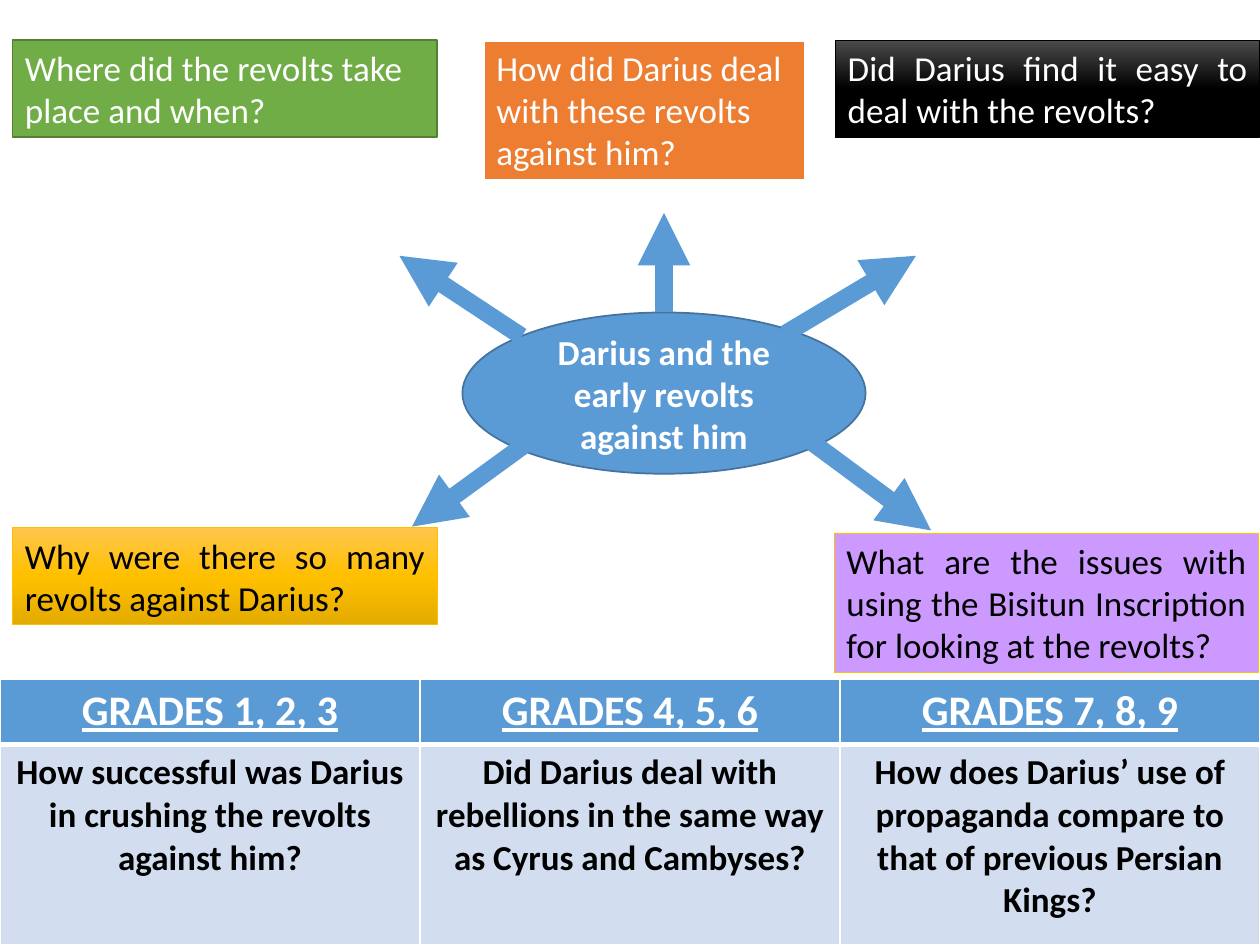
from copy import deepcopy
from dataclasses import dataclass

from lxml.etree import SubElement
from pptx import Presentation
from pptx.dml.color import RGBColor
from pptx.enum.shapes import MSO_CONNECTOR, MSO_SHAPE
from pptx.enum.text import MSO_ANCHOR, PP_ALIGN
from pptx.oxml import parse_xml
from pptx.oxml.ns import nsdecls, qn
from pptx.slide import Slide
from pptx.util import Inches, Pt

WHITE = RGBColor(0xFF, 0xFF, 0xFF)
BLACK = RGBColor(0x00, 0x00, 0x00)
BLUE = RGBColor(0x5B, 0x9B, 0xD5)
DARK_BLUE = RGBColor(0x43, 0x73, 0x9E)
PALE_BLUE = RGBColor(0xD2, 0xDE, 0xEF)
GREEN = RGBColor(0x70, 0xAD, 0x47)
DARK_GREEN = RGBColor(0x53, 0x80, 0x35)
ORANGE = RGBColor(0xED, 0x7D, 0x31)
PURPLE = RGBColor(0xCC, 0x99, 0xFF)
GOLD = RGBColor(0xFF, 0xC0, 0x00)
BLACK_FADE = (RGBColor(0x4B, 0x4B, 0x4B), BLACK, BLACK)
GOLD_FADE = (RGBColor(0xFF, 0xC6, 0x4B), GOLD, RGBColor(0xE3, 0xAB, 0x00))

LEFT, MIDDLE, RIGHT = 1, 38.4, 66.3
TOP, BOTTOM = 3.2, 41.9
WIDE, TWO_LINES, THREE_LINES = 33.7, 7.7, 11.1

QUESTIONS = [
    ("Where did the revolts take place and when?",
     (LEFT, TOP, WIDE, TWO_LINES), GREEN, DARK_GREEN, 1, WHITE, PP_ALIGN.LEFT),
    ("How did Darius deal with these revolts against him?",
     (MIDDLE, TOP, 25.5, THREE_LINES), ORANGE, WHITE, 1.5, WHITE, PP_ALIGN.LEFT),
    ("Did Darius find it easy to deal with the revolts?",
     (RIGHT, TOP, WIDE, TWO_LINES), BLACK_FADE, BLACK, 0.5, WHITE, PP_ALIGN.JUSTIFY),
    ("Why were there so many revolts against Darius?",
     (LEFT, BOTTOM, WIDE, TWO_LINES), GOLD_FADE, GOLD, 0.5, BLACK, PP_ALIGN.JUSTIFY),
    ("What are the issues with using the Bisitun Inscription for looking at the revolts?",
     (66.2, 42.3, WIDE, THREE_LINES), PURPLE, GOLD, 0.5, BLACK, PP_ALIGN.JUSTIFY),
]
ARROWS = [
    ((41.4, 26.7), (31.7, 20.3)),
    ((52.7, 24.8), (52.7, 16.9)),
    ((62.3, 26.5), (72.7, 20.3)),
    ((42.6, 34.6), (32.7, 41.8)),
    ((63.9, 34.7), (73.9, 42.1)),
]
GRADES = [
    ("GRADES 1, 2, 3", "How successful was Darius in crushing the revolts against him?"),
    ("GRADES 4, 5, 6", "Did Darius deal with rebellions in the same way as Cyrus and Cambyses?"),
    ("GRADES 7, 8, 9",
     "How does Darius’ use of propaganda compare to that of previous Persian Kings?"),
]


@dataclass
class SlideBuilder:
    """Draws styled elements on a slide ruled into 100 columns and 75 rows."""

    slide: Slide
    font_name: str = "Calibri"
    text_size: float = 20
    heading_size: float = 24
    arrow_width: float = 10
    cell: float = 0.1

    def grid(self, *lengths):
        return [Inches(length * self.cell) for length in lengths]

    def set_text(self, frame, text, color, align, bold=False, size=None, underline=None):
        paragraph = frame.paragraphs[0]
        paragraph.text = text
        paragraph.alignment = align
        font = paragraph.font
        font.name, font.size = self.font_name, Pt(size or self.text_size)
        font.bold, font.underline = bold, underline
        font.color.rgb = color

    def paint(self, shape, fill):
        if isinstance(fill, RGBColor):
            shape.fill.solid()
            shape.fill.fore_color.rgb = fill
            return
        shape.fill.gradient()
        shape.fill.gradient_angle = 270
        stop_list = next(shape._element.spPr.iter(qn("a:gsLst")))
        stop_list.append(deepcopy(stop_list[-1]))
        for index, (stop, color) in enumerate(zip(shape.fill.gradient_stops, fill)):
            stop.position = index / 2
            stop.color.rgb = color

    def box(self, text, place, fill, line, line_width, color, align,
            kind=MSO_SHAPE.RECTANGLE, anchor=MSO_ANCHOR.TOP, bold=False):
        shape = self.slide.shapes.add_shape(kind, *self.grid(*place))
        shape.shadow.inherit = False
        self.paint(shape, fill)
        shape.line.color.rgb = line
        shape.line.width = Pt(line_width)
        shape.text_frame.word_wrap = True
        shape.text_frame.vertical_anchor = anchor
        self.set_text(shape.text_frame, text, color, align, bold)

    def arrow(self, start, end):
        connector = self.slide.shapes.add_connector(
            MSO_CONNECTOR.STRAIGHT, *self.grid(*start, *end))
        connector.line.color.rgb = BLUE
        connector.line.width = Pt(self.arrow_width)
        SubElement(connector.line._get_or_add_ln(), qn("a:tailEnd"), type="triangle")
        SubElement(connector._element.spPr, qn("a:effectLst"))

    def border(self, cell, **widths):
        for side, width in widths.items():
            cell._tc.get_or_add_tcPr().append(parse_xml(
                f'<a:ln{side} {nsdecls("a")} w="{Pt(width)}"><a:solidFill>'
                f'<a:srgbClr val="{WHITE}"/></a:solidFill></a:ln{side}>'))

    def table(self, columns, place, row_heights):
        shape = self.slide.shapes.add_table(
            len(row_heights), len(columns), *self.grid(*place))
        table = shape.table
        for row, height in zip(table.rows, self.grid(*row_heights)):
            row.height = height
        for index, (heading, question) in enumerate(columns):
            head, body = table.cell(0, index), table.cell(1, index)
            self.border(head, L=1, R=1, T=1, B=3)
            self.border(body, L=1, R=1, T=3, B=1)
            self.paint(head, BLUE)
            self.paint(body, PALE_BLUE)
            self.set_text(head.text_frame, heading, WHITE, PP_ALIGN.CENTER, True,
                          self.heading_size, True)
            self.set_text(body.text_frame, question, BLACK, PP_ALIGN.CENTER, True)


def main():
    presentation = Presentation()
    presentation.slide_width, presentation.slide_height = Inches(10), Inches(7.5)
    builder = SlideBuilder(presentation.slides.add_slide(presentation.slide_layouts[6]))
    builder.box("Darius and the early revolts against him", (36.7, 24.8, 32, 12.8),
                BLUE, DARK_BLUE, 1, WHITE, PP_ALIGN.CENTER,
                MSO_SHAPE.OVAL, MSO_ANCHOR.MIDDLE, True)
    for question in QUESTIONS:
        builder.box(*question)
    for start, end in ARROWS:
        builder.arrow(start, end)
    builder.table(GRADES, (0, 53.9, 100, 21.1), (5.2, 15.9))
    presentation.save("out.pptx")


if __name__ == "__main__":
    main()
